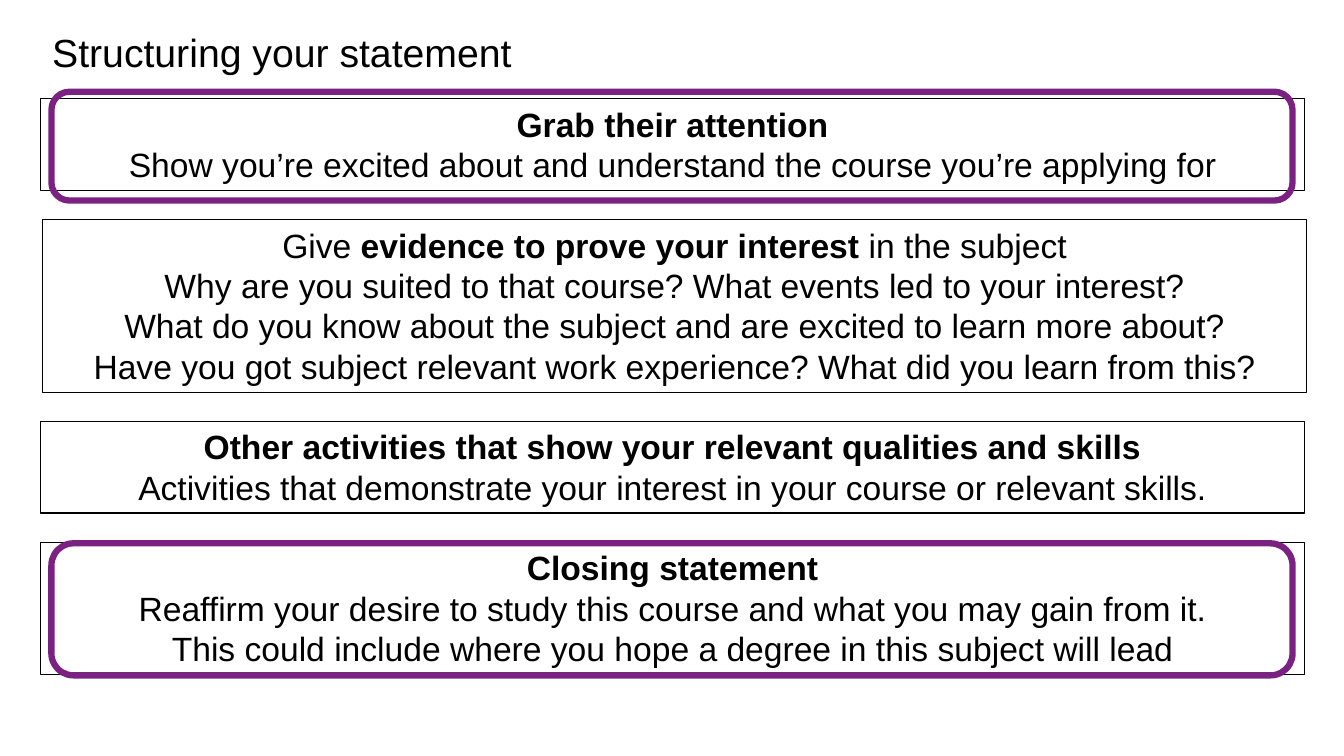
from pptx import Presentation
from pptx.dml.color import RGBColor
from pptx.enum.shapes import MSO_SHAPE
from pptx.enum.text import MSO_ANCHOR, MSO_AUTO_SIZE, PP_ALIGN
from pptx.util import Emu, Pt

RECTANGLE = MSO_SHAPE.RECTANGLE
ROUNDED = MSO_SHAPE.ROUNDED_RECTANGLE
TOP = MSO_ANCHOR.TOP
GROW = MSO_AUTO_SIZE.SHAPE_TO_FIT_TEXT
LEFT, CENTER = PP_ALIGN.LEFT, PP_ALIGN.CENTER

EMU_PER_PX = 9144
BLACK, PURPLE = "000000", "7B2182"

SECTION_TOP, SECTION_WIDTH, SECTION_GAP = 98, 1254, 29
LINE_HEIGHT, SECTION_PADDING = 40, 11

SECTIONS = [
    (40, [
        [("Grab their attention", True)],
        [("Show you’re excited about and understand the course you’re applying for", False)],
    ]),
    (42, [
        [("Give ", False), ("evidence to prove your interest", True), (" in the subject", False)],
        [("Why are you suited to that course? What events led to your interest?", False)],
        [("What do you know about the subject and are excited to learn more about?", False)],
        [("Have you got subject relevant work experience? What did you learn from this?", False)],
    ]),
    (40, [
        [("Other activities that show your relevant qualities and skills", True)],
        [("Activities that demonstrate your interest in your course or relevant skills.", False)],
    ]),
    (40, [
        [("Closing statement", True)],
        [("Reaffirm your desire to study this course and what you may gain from it.", False)],
        [("This could include where you hope a degree in this subject will lead", False)],
    ]),
]
HIGHLIGHTS = [(91, 108), (539, 131)]


def px(length):
    """Turn pixels into EMU."""
    return Emu(length * EMU_PER_PX)


def color(hex_string):
    """Turn a hex string into a colour."""
    return RGBColor.from_string(hex_string)


def write(frame, lines, size=24, font="Arial", ink=BLACK, align=CENTER):
    """Fill a text frame with lines of (text, bold) runs."""
    frame.word_wrap = True
    frame.auto_size = GROW
    frame.vertical_anchor = TOP
    for index, line in enumerate(lines):
        paragraph = frame.paragraphs[0] if index == 0 else frame.add_paragraph()
        paragraph.alignment = align
        for text, bold in line:
            run = paragraph.add_run()
            run.text = text
            run.font.name = font
            run.font.size = Pt(size)
            run.font.bold = bold
            run.font.color.rgb = color(ink)


class StatementSlide:
    """Hold the slide and draw its elements in one style."""

    def __init__(self, presentation):
        """Add a blank slide."""
        self.shapes = presentation.slides.add_slide(presentation.slide_layouts[6]).shapes

    def outline(self, preset, left, top, width, height, stroke, weight):
        """Draw an unfilled outline."""
        frame = self.shapes.add_shape(preset, px(left), px(top), px(width), px(height))
        frame.shadow.inherit = False
        frame.fill.background()
        frame.line.color.rgb = color(stroke)
        frame.line.width = Pt(weight)
        return frame

    def title(self, text):
        """Write the slide heading."""
        heading = self.shapes.add_textbox(px(42), px(23), px(667), px(57))
        write(heading.text_frame, [[(text, False)]], size=28, align=LEFT)

    def section(self, left, top, height, lines):
        """Draw one part of the statement."""
        part = self.outline(RECTANGLE, left, top, SECTION_WIDTH, height, BLACK, 0.75)
        write(part.text_frame, lines)

    def highlight(self, top, height):
        """Ring a section in purple."""
        self.outline(ROUNDED, 51, top, 1231, height, PURPLE, 4.5)


def main():
    """Build and save the slide."""
    presentation = Presentation()
    presentation.slide_width, presentation.slide_height = px(1333), px(750)
    slide = StatementSlide(presentation)
    top = SECTION_TOP
    for left, lines in SECTIONS:
        height = SECTION_PADDING + LINE_HEIGHT * len(lines)
        slide.section(left, top, height, lines)
        top += height + SECTION_GAP
    for ring_top, ring_height in HIGHLIGHTS:
        slide.highlight(ring_top, ring_height)
    slide.title("Structuring your statement")
    presentation.save("out.pptx")


if __name__ == "__main__":
    main()
